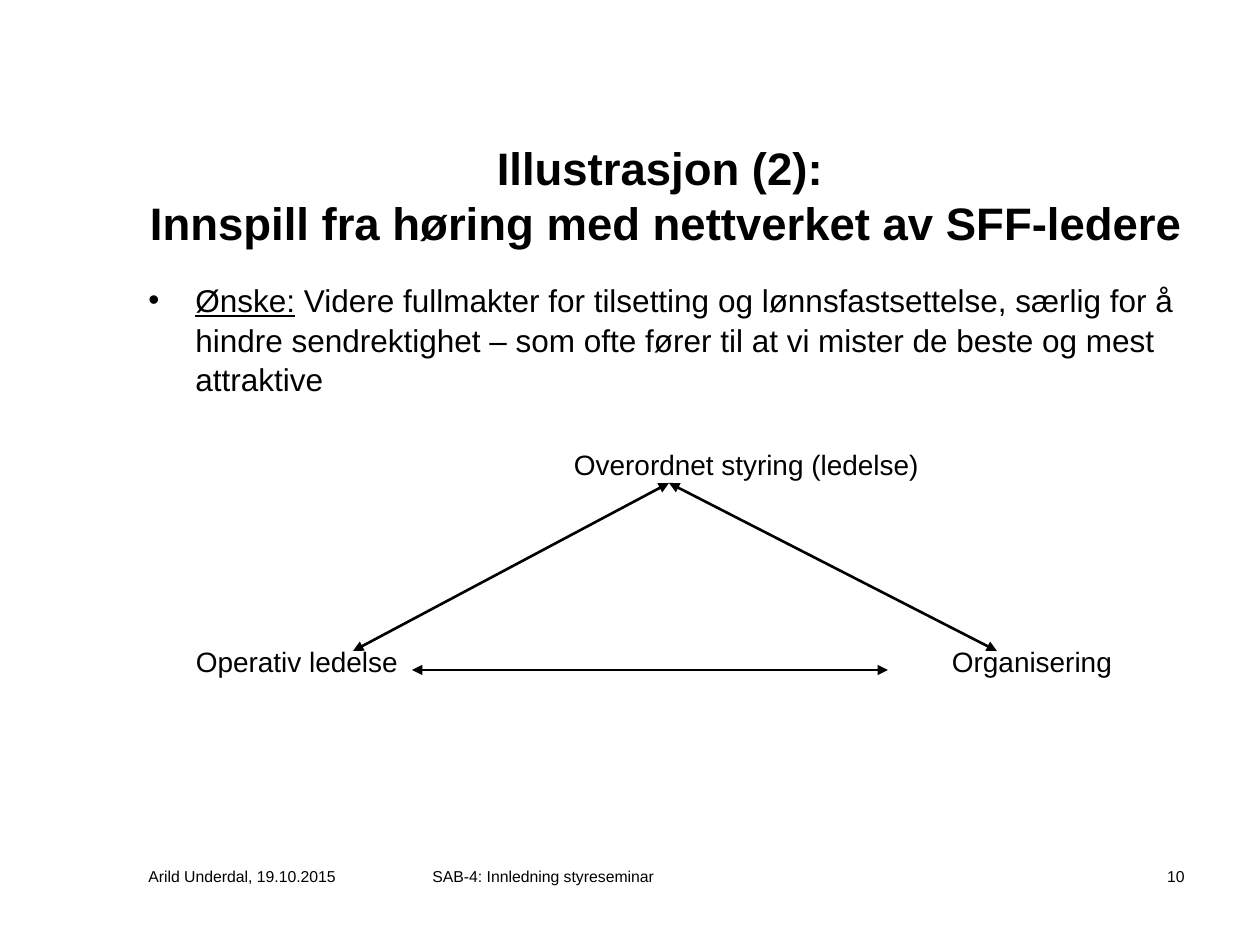
from lxml import etree
from pptx import Presentation
from pptx.dml.color import RGBColor
from pptx.enum.shapes import MSO_CONNECTOR
from pptx.enum.text import MSO_ANCHOR, PP_ALIGN
from pptx.oxml.ns import qn
from pptx.util import Pt

PX = 914400 / 126
BLACK = RGBColor(0, 0, 0)
LEFT, WIDTH = 136, 1061
INDENT = 47


def px(n):
    return round(n * PX)


def add_text(x, y, w, h, text, size, bold=False, align=PP_ALIGN.LEFT,
             anchor=MSO_ANCHOR.TOP, inset=True):
    """Add a text box with one styled run and return its paragraph."""
    tf = s.shapes.add_textbox(px(x), px(y), px(w), px(h)).text_frame
    tf.word_wrap = True
    tf.vertical_anchor = anchor
    if not inset:
        tf.margin_left = tf.margin_top = tf.margin_right = tf.margin_bottom = 0
    p = tf.paragraphs[0]
    p.alignment = align
    for i, line in enumerate(text.split("\n")):
        if i:
            p.add_line_break()
        r = p.add_run()
        r.text = line
        r.font.name, r.font.size, r.font.bold = "Arial", Pt(size), bold
        r.font.color.rgb = BLACK
    return p


prs = Presentation()
prs.slide_width, prs.slide_height = px(1260), px(945)
s = prs.slides.add_slide(prs.slide_layouts[6])

add_text(LEFT, 116, WIDTH, 158,
         "Illustrasjon (2): \nInnspill fra høring med nettverket av SFF-ledere",
         26, bold=True, align=PP_ALIGN.CENTER, anchor=MSO_ANCHOR.MIDDLE)

# Bulleted wish
p = add_text(LEFT, 273, WIDTH, 130, "Ønske:", 18)
p.line_spacing = 1.05
pPr = p._p.get_or_add_pPr()
pPr.set("marL", str(px(INDENT)))
pPr.set("indent", str(-px(INDENT)))
etree.SubElement(pPr, qn("a:buFont"), typeface="Arial")
etree.SubElement(pPr, qn("a:buChar"), char="•")
p.runs[0].font.underline = True
r = p.add_run()
r.text = (" Videre fullmakter for tilsetting og lønnsfastsettelse, særlig for å "
          "hindre sendrektighet – som ofte fører til at vi mister de beste og "
          "mest attraktive")
r.font.name, r.font.size = "Arial", Pt(18)
r.font.color.rgb = BLACK

# Triangle corners
for x, y, w, label in [
    (574, 448, 360, "Overordnet styring (ledelse)"),
    (196, 645, 215, "Operativ ledelse"),
    (952, 645, 180, "Organisering"),
]:
    add_text(x, y, w, 33, label, 16, anchor=MSO_ANCHOR.MIDDLE, inset=False)

# Two-way arrows between the corners
for x1, y1, x2, y2 in [
    (412, 670, 888, 670),
    (669, 483, 353, 651),
    (669, 483, 997, 651),
]:
    line = s.shapes.add_connector(MSO_CONNECTOR.STRAIGHT,
                                  px(x1), px(y1), px(x2), px(y2))
    line.line.color.rgb = BLACK
    line.line.width = Pt(1.5)
    ln = line.line._get_or_add_ln()
    for end in ("a:headEnd", "a:tailEnd"):
        etree.SubElement(ln, qn(end), type="triangle")
    etree.SubElement(line._element.spPr, qn("a:effectLst"))

# Footer
for x, w, text, align in [
    (LEFT, 262, "Arild Underdal, 19.10.2015", PP_ALIGN.LEFT),
    (420, 662, "SAB-4: Innledning styreseminar", PP_ALIGN.LEFT),
    (1102, 95, "10", PP_ALIGN.RIGHT),
]:
    add_text(x, 861, w, 63, text, 9, align=align)

prs.save("out.pptx")
